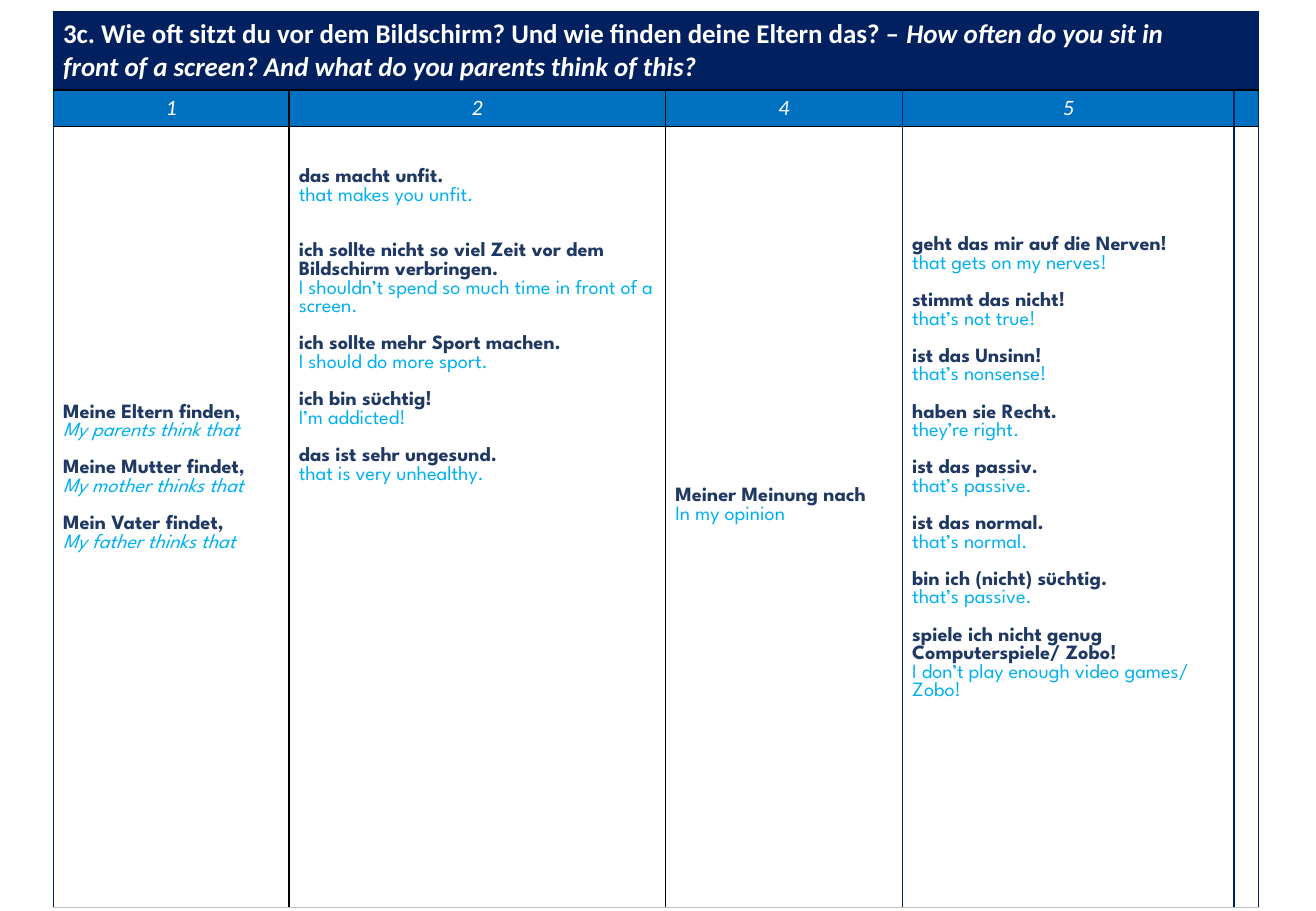
from lxml import etree
from pptx import Presentation
from pptx.dml.color import RGBColor
from pptx.enum import text as t
from pptx.oxml import ns
from pptx.util import Pt

NAVY, BLUE, WHITE, BLACK, GREY = "002060", "0070C0", "FFFFFF", "000000", "BFBFBF"
GERMAN, ENGLISH = "203864", "00B0F0"
PHRASE_FONT, HEADING_FONT = "League Spartan", "Calibri"
LINE = 11  # height of one phrase line

COLUMN_WIDTHS = [139.7, 223.2, 140.4, 196.6, 13.7]
ROW_HEIGHTS = [45.6, 21.4, 463]
VERTICAL_RULES = [NAVY, BLACK, BLACK, NAVY, NAVY, NAVY]
HORIZONTAL_RULES = [NAVY, BLACK, BLACK, GREY]
NUMBERS = ["1", "2", "4", "5"]

PARENTS = [
    ("Meine Eltern finden,", "My parents think that"),
    ("Meine Mutter findet,", "My mother thinks that"),
    ("Mein Vater findet,", "My father thinks that"),
]
SELF_CRITICISM = [
    ("das macht unfit.", "that makes you unfit."),
    ("ich sollte nicht so viel Zeit vor dem Bildschirm verbringen.",
     "I shouldn’t spend so much time in front of a screen."),
    ("ich sollte mehr Sport machen.", "I should do more sport."),
    ("ich bin süchtig!", "I’m addicted!"),
    ("das ist sehr ungesund.", "that is very unhealthy."),
]
OPINION = [("Meiner Meinung nach", "In my opinion")]
VERDICTS = [
    ("geht das mir auf die Nerven!", "that gets on my nerves!"),
    ("stimmt das nicht!", "that’s not true!"),
    ("ist das Unsinn!", "that’s nonsense!"),
    ("haben sie Recht.", "they’re right."),
    ("ist das passiv.", "that’s passive."),
    ("ist das normal.", "that’s normal."),
    ("bin ich (nicht) süchtig.", "that’s passive."),
    ("spiele ich nicht genug Computerspiele/ Zobo!",
     "I don’t play enough video games/ Zobo!"),
]


def rgb(value):
    return RGBColor.from_string(value)


def add_text(paragraph, words, *, size, font, color, bold=False, italic=False):
    run = paragraph.add_run()
    run.text = words
    run.font.size, run.font.name = Pt(size), font
    run.font.bold, run.font.italic = bold, italic
    run.font.color.rgb = rgb(color)


def set_border(cell, side, color):
    line = etree.SubElement(cell._tc.get_or_add_tcPr(), ns.qn(f"a:ln{side}"), w=str(Pt(1)))
    solid = etree.SubElement(line, ns.qn("a:solidFill"))
    etree.SubElement(solid, ns.qn("a:srgbClr"), val=color)


def style_cell(cell, row, column):
    left, right = (NAVY, NAVY) if row == 0 else VERTICAL_RULES[column:column + 2]
    top, bottom = HORIZONTAL_RULES[row:row + 2]
    for side, color in zip("LRTB", (left, right, top, bottom)):
        set_border(cell, side, color)
    cell.fill.solid()
    cell.fill.fore_color.rgb = rgb((NAVY, BLUE, WHITE)[row])
    cell.margin_left = cell.margin_right = Pt(5.8)
    cell.margin_top = cell.margin_bottom = Pt(3.6 if row == 0 else 2.9)


def shrink_empty(cell):
    """Keep a cell without text from stretching its row."""
    paragraph = cell.text_frame.paragraphs[0]._p
    etree.SubElement(paragraph, ns.qn("a:endParaRPr"), sz="1200")


def fill_phrases(cell, phrases, *, middle=True, above=2.9, below=2.9,
                 italic=False, wide_gap_before=None):
    cell.vertical_anchor = t.MSO_ANCHOR.MIDDLE if middle else t.MSO_ANCHOR.TOP
    cell.margin_top, cell.margin_bottom = Pt(above), Pt(below)
    frame = cell.text_frame
    for index, (german, english) in enumerate(phrases):
        phrase = frame.add_paragraph() if index else frame.paragraphs[0]
        if index:
            phrase.space_before = Pt(2 * LINE if index == wide_gap_before else LINE)
        add_text(phrase, german, size=12, font=PHRASE_FONT, color=GERMAN, bold=True)
        add_text(frame.add_paragraph(), english, size=12, font=PHRASE_FONT,
                 color=ENGLISH, italic=italic)


def add_grid(slide):
    grid = slide.shapes.add_table(
        len(ROW_HEIGHTS), len(COLUMN_WIDTHS), Pt(31.6), Pt(7),
        Pt(sum(COLUMN_WIDTHS)), Pt(sum(ROW_HEIGHTS))).table
    grid.horz_banding = grid.first_row = False
    for column, width in zip(grid.columns, COLUMN_WIDTHS):
        column.width = Pt(width)
    for row, height in zip(grid.rows, ROW_HEIGHTS):
        row.height = Pt(height)
    for row in range(len(ROW_HEIGHTS)):
        for column in range(len(COLUMN_WIDTHS)):
            style_cell(grid.cell(row, column), row, column)
        shrink_empty(grid.cell(row, len(COLUMN_WIDTHS) - 1))
    return grid


def main():
    deck = Presentation()
    deck.slide_width, deck.slide_height = Pt(780), Pt(540)
    slide = deck.slides.add_slide(deck.slide_layouts[6])
    grid = add_grid(slide)

    # Question across the first four columns
    question = grid.cell(0, 0)
    question.merge(grid.cell(0, 3))
    question.vertical_anchor = t.MSO_ANCHOR.MIDDLE
    heading = question.text_frame.paragraphs[0]
    heading_format = dict(size=16, font=HEADING_FONT, color=WHITE, bold=True)
    add_text(heading, "3c. Wie oft sitzt du vor dem Bildschirm? "
             "Und wie finden deine Eltern das? – ", **heading_format)
    add_text(heading, "How often do you sit in front of a screen? "
             "And what do you parents think of this?", italic=True, **heading_format)

    # Column numbers
    for column, number in enumerate(NUMBERS):
        label = grid.cell(1, column).text_frame.paragraphs[0]
        label.alignment = t.PP_ALIGN.CENTER
        add_text(label, number, size=13, font=HEADING_FONT, color=WHITE, italic=True)

    # Phrases
    fill_phrases(grid.cell(2, 0), PARENTS, below=49, italic=True)
    fill_phrases(grid.cell(2, 1), SELF_CRITICISM, middle=False,
                 above=2.9 + 2 * LINE, wide_gap_before=1)
    fill_phrases(grid.cell(2, 2), OPINION, below=16)
    fill_phrases(grid.cell(2, 3), VERDICTS, below=60)

    deck.save("out.pptx")


if __name__ == "__main__":
    main()
